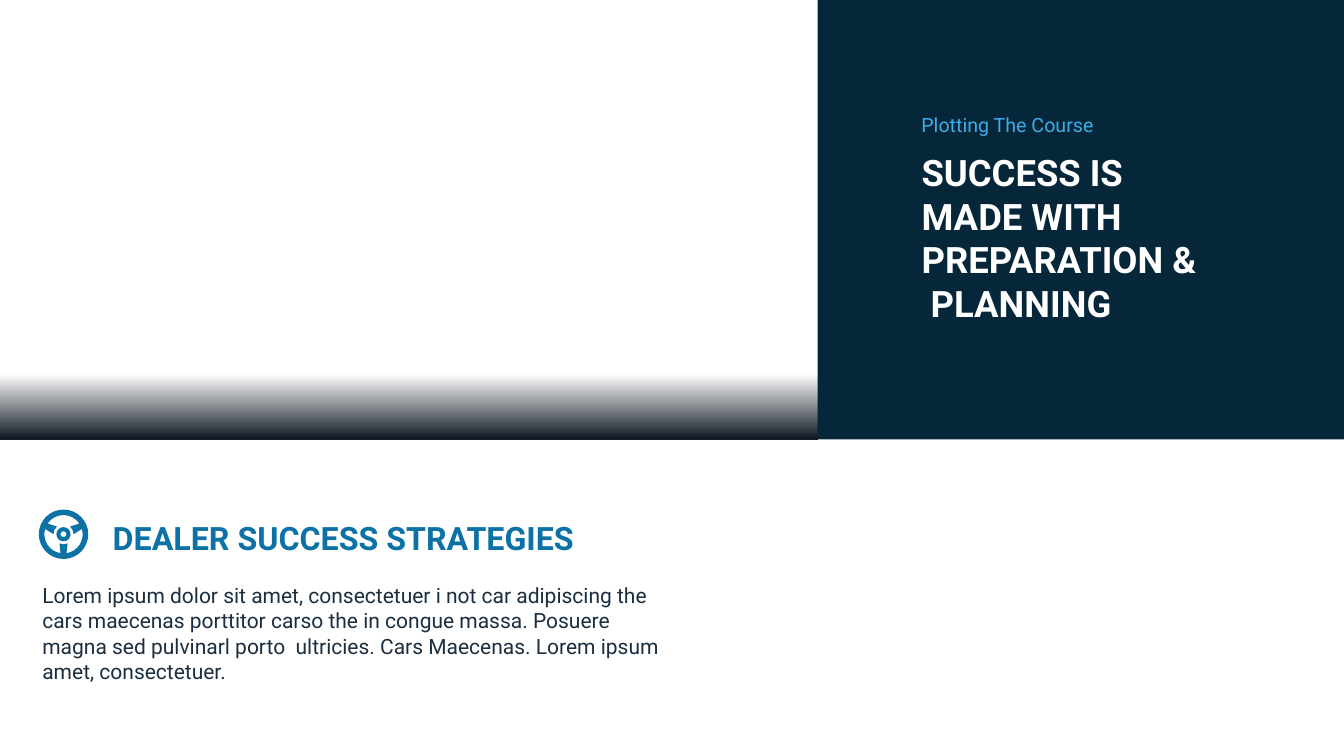
from math import cos, radians, sin, tan

from lxml.etree import SubElement
from pptx import Presentation
from pptx.dml.color import RGBColor
from pptx.enum.shapes import MSO_SHAPE
from pptx.enum.text import MSO_ANCHOR, MSO_AUTO_SIZE, PP_ALIGN
from pptx.oxml import parse_xml
from pptx.oxml.ns import nsdecls, qn
from pptx.util import Inches, Pt

NAVY = RGBColor(0x05, 0x27, 0x39)
NIGHT = RGBColor(0x0B, 0x15, 0x1F)
INK = RGBColor(0x1C, 0x2F, 0x40)
BLUE = RGBColor(0x0C, 0x72, 0xA5)
SKY = RGBColor(0x3D, 0xAC, 0xEA)
WHITE = RGBColor(0xFF, 0xFF, 0xFF)

SPLIT, FLOOR = 8.11, 4.36
SPOKES = (90, 205, 335)


def polar(radius, angle):
    return radius * cos(radians(angle)), radius * sin(radians(angle))


def arc(radius, start, end):
    """Return the two handles and the end point of a Bezier arc."""
    pull = 4 / 3 * tan(radians(end - start) / 4)
    (a, b), (c, d) = polar(radius, start), polar(radius, end)
    return [(a - pull * b, b + pull * a), (c + pull * d, d - pull * c), (c, d)]


def circle(radius):
    return [[(radius, 0)]] + [arc(radius, turn, turn + 90) for turn in range(0, 360, 90)]


def cutout():
    """Return the outline of the space between rim, spokes and hub."""
    last = SPOKES[-1] - 360
    pieces = [[polar(0.19, last + 9)]]
    for spoke in SPOKES:
        pieces += [arc(0.19, last + 9, spoke - 9), [polar(0.1, spoke - 24)],
                   arc(0.1, spoke - 24, spoke + 24), [polar(0.19, spoke + 9)]]
        last = spoke
    return pieces[:-1]


def bend(shape, pieces):
    """Turn each run of three line points into one curve."""
    nodes = iter(list(shape._element.iter(qn("a:lnTo"))))
    for piece in pieces:
        run = [next(nodes) for _ in piece]
        if len(run) == 3:
            curve = parse_xml(f"<a:cubicBezTo {nsdecls('a')}/>")
            run[0].addprevious(curve)
            for node in run:
                curve.append(node[0])
                node.getparent().remove(node)


class Page:
    def __init__(self, slide):
        self.slide = slide
        self.shapes = slide.shapes
        self.face = "Roboto"

    def plain(self, shape):
        shape.shadow.inherit = False
        shape.line.fill.background()
        return shape

    def panel(self, left, top, width, height):
        box = [Inches(v) for v in (left, top, width, height)]
        return self.plain(self.shapes.add_shape(MSO_SHAPE.RECTANGLE, *box))

    def paint(self, shape, color):
        shape.fill.solid()
        shape.fill.fore_color.rgb = color

    def fade(self, color, *box):
        """Draw a panel that fades from a solid foot to clear above."""
        shape = self.panel(*box)
        shape.fill.gradient()
        shape.fill.gradient_angle = 90
        for stop, place in zip(shape.fill.gradient_stops, (0, 0.6)):
            stop.position = place
            stop.color.rgb = color
        clear = list(shape._element.spPr.iter(qn("a:srgbClr")))[-1]
        SubElement(clear, qn("a:alpha")).set("val", "0")

    def text(self, words, box, style, holder=None):
        shape = holder or self.shapes.add_textbox(0, 0, 0, 0)
        self.shapes._spTree.append(shape._element)
        names = ("left", "top", "width", "height")
        for name, value in zip(names, box):
            setattr(shape, name, Inches(value))
        frame = shape.text_frame
        frame.text = words
        layout = {"word_wrap": True, "auto_size": MSO_AUTO_SIZE.SHAPE_TO_FIT_TEXT,
                  "vertical_anchor": MSO_ANCHOR.TOP}
        for name, value in layout.items():
            setattr(frame, name, value)
        para = frame.paragraphs[0]
        props = para._p.get_or_add_pPr()
        props.set("marL", "0")
        props.set("indent", "0")
        SubElement(props, qn("a:buNone"))
        para.alignment = PP_ALIGN.LEFT
        para.space_before = Pt(0)
        size, color, bold = style
        font = para.runs[0].font
        for name, value in {"name": self.face, "size": Pt(size), "bold": bold}.items():
            setattr(font, name, value)
        font.color.rgb = color

    def wheel(self, x, y, color):
        group = self.shapes.add_group_shape()
        rim = (circle(0.245), cutout())
        hub = (circle(0.07), circle(0.03))
        for outer, inner in (rim, hub):
            rings = [[(Inches(x + a), Inches(y + b)) for piece in ring for a, b in piece]
                     for ring in (outer, inner)]
            pen = group.shapes.build_freeform(*rings[0][0])
            pen.add_line_segments(rings[0][1:])
            pen.move_to(*rings[1][0])
            pen.add_line_segments(rings[1][1:])
            shape = self.plain(pen.convert_to_shape())
            bend(shape, outer[1:] + inner[1:])
            self.paint(shape, color)


def main():
    deck = Presentation()
    deck.slide_width, deck.slide_height = Inches(13.33), Inches(7.5)
    page = Page(deck.slides.add_slide(deck.slide_layouts[1]))
    title, body = page.slide.placeholders

    page.paint(page.panel(SPLIT, 0, 13.33 - SPLIT, FLOOR), NAVY)
    page.fade(NIGHT, 0, 3.28, SPLIT, FLOOR - 3.28)
    page.text("Lorem ipsum dolor sit amet, consectetuer i not car adipiscing the "
              "cars maecenas porttitor carso the in congue massa. Posuere magna "
              "sed pulvinarl porto  ultricies. Cars Maecenas. Lorem ipsum amet, "
              "consectetuer.", (0.32, 5.73, 6.35, 1.11), (15, INK, False), body)
    page.text("DEALER SUCCESS STRATEGIES", (1.02, 5.09, 5.54, 0.49), (23, BLUE, True))
    page.wheel(0.63, 5.3, BLUE)
    page.text("SUCCESS IS MADE WITH PREPARATION &  PLANNING",
              (9.04, 1.44, 2.97, 1.85), (26, WHITE, True), title)
    page.text("Plotting The Course", (9.04, 1.07, 2.97, 0.34), (14, SKY, False))
    deck.save("out.pptx")


if __name__ == "__main__":
    main()
